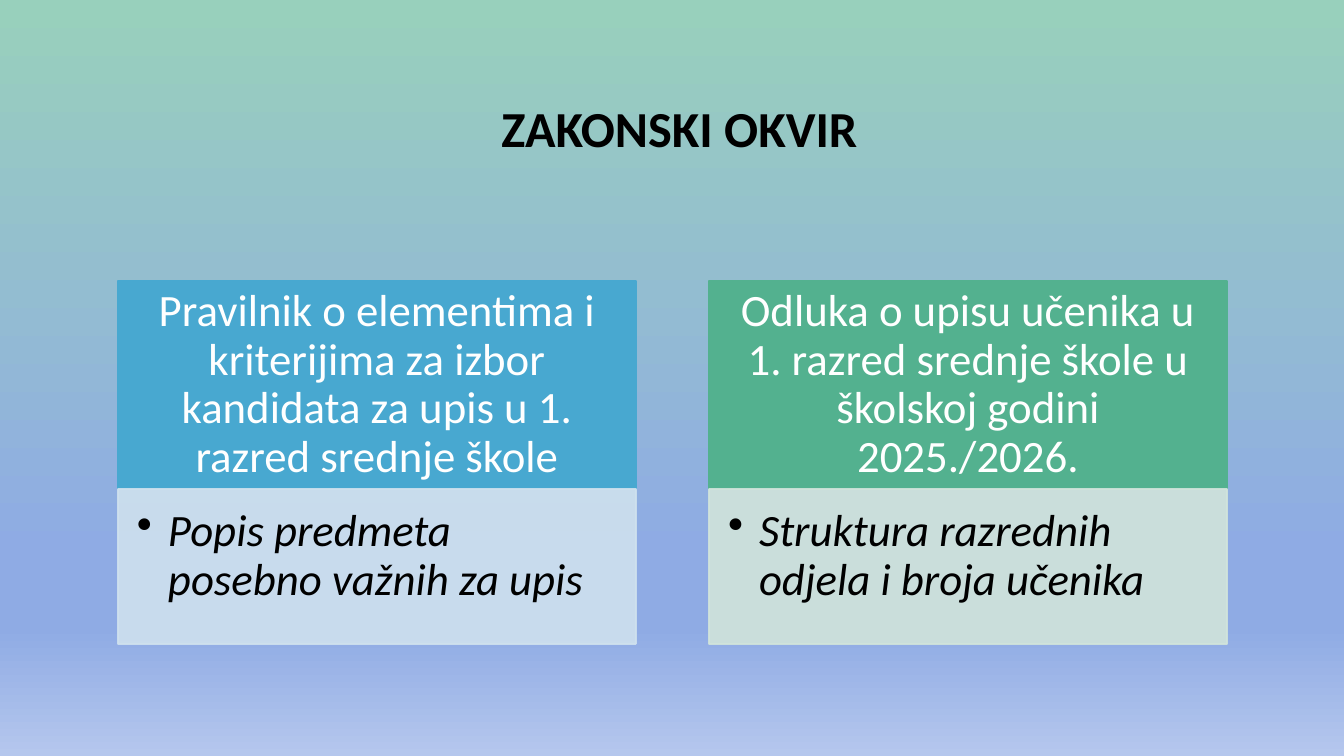
from dataclasses import dataclass

import pptx
import pptx.dml.color
import pptx.enum.shapes
import pptx.enum.text
import pptx.oxml.ns
import pptx.util
from lxml import etree

TITLE = "ZAKONSKI OKVIR"
# heading, detail, heading colour, detail colour
COLUMNS = [
    ("Pravilnik o elementima i kriterijima za izbor kandidata za upis u 1. razred srednje škole",
     "Popis predmeta posebno važnih za upis", "48A8D0", "CFE1EE"),
    ("Odluka o upisu učenika u 1. razred srednje škole u školskoj godini 2025./2026.",
     "Struktura razrednih odjela i broja učenika", "53B18F", "D1E4DB"),
]


@dataclass(frozen=True)
class Theme:
    font: str = "Calibri"
    title_size: int = 36
    body_size: int = 32
    dark: str = "000000"
    light: str = "FFFFFF"
    line_width: float = 1.25
    line_spacing: float = 0.9
    detail_opacity: int = 90
    background: tuple = ((0, "98D0BC"), (74, "8FABE4"), (83, "8FABE4"), (100, "B5C7ED"))


THEME = Theme()
SLIDE_WIDTH, SLIDE_HEIGHT = 1344, 756
COLUMN_LEFT, COLUMN_TOP, COLUMN_WIDTH, COLUMN_PITCH = 118, 281, 518, 591
HEADING_HEIGHT, DETAIL_HEIGHT = 208, 155
BULLET_INDENT = 31

qn = pptx.oxml.ns.qn
ALIGN = pptx.enum.text.PP_ALIGN
ANCHOR = pptx.enum.text.MSO_ANCHOR


def px(length):
    return pptx.util.Emu(round(length * 12192000 / SLIDE_WIDTH))


def rgb(value):
    return pptx.dml.color.RGBColor.from_string(value)


def paint_background(page):
    fill = page.background.fill
    fill.gradient()
    fill.gradient_angle = 270
    stops = page.element.find(".//" + qn("a:gsLst"))
    for stop in list(stops):
        stops.remove(stop)
    for percent, color in THEME.background:
        stop = etree.SubElement(stops, qn("a:gs"), pos=str(percent * 1000))
        etree.SubElement(stop, qn("a:srgbClr"), val=color)


def write(shape, text, size, color, align, anchor, insets, bullet=False):
    frame = shape.text_frame
    frame.word_wrap = True
    frame.auto_size = pptx.enum.text.MSO_AUTO_SIZE.NONE
    frame.vertical_anchor = anchor
    (frame.margin_left, frame.margin_top,
     frame.margin_right, frame.margin_bottom) = map(px, insets)
    para = frame.paragraphs[0]
    para.text = text
    para.alignment = align
    para.line_spacing = THEME.line_spacing
    para.space_before = pptx.util.Pt(0)
    if bullet:
        properties = para._p.get_or_add_pPr()
        properties.set("marL", str(px(BULLET_INDENT)))
        properties.set("indent", str(-px(BULLET_INDENT)))
        etree.SubElement(properties, qn("a:buChar"), char="•")
    para.font.name = THEME.font
    para.font.size = pptx.util.Pt(size)
    para.font.color.rgb = rgb(color)
    return para


def add_panel(page, left, top, height, color, opacity=100):
    panel = page.shapes.add_shape(pptx.enum.shapes.MSO_SHAPE.RECTANGLE,
                                  px(left), px(top), px(COLUMN_WIDTH), px(height))
    panel.shadow.inherit = False
    panel.fill.solid()
    panel.fill.fore_color.rgb = rgb(color)
    panel.line.color.rgb = rgb(color)
    panel.line.width = pptx.util.Pt(THEME.line_width)
    if opacity < 100:
        for tint in panel._element.spPr.iter(qn("a:srgbClr")):
            etree.SubElement(tint, qn("a:alpha"), val=str(opacity * 1000))
    return panel


def main():
    deck = pptx.Presentation()
    deck.slide_width, deck.slide_height = px(SLIDE_WIDTH), px(SLIDE_HEIGHT)
    page = deck.slides.add_slide(deck.slide_layouts[5])
    paint_background(page)

    title = page.shapes.title
    title.left, title.top, title.width, title.height = map(px, (125, 70, 1109, 177))
    para = write(title, TITLE, THEME.title_size, THEME.dark,
                 ALIGN.CENTER, ANCHOR.MIDDLE, (10, 5, 10, 60))
    para.font.bold = True

    for index, (heading, detail, strong, pale) in enumerate(COLUMNS):
        left = COLUMN_LEFT + index * COLUMN_PITCH
        panel = add_panel(page, left, COLUMN_TOP, HEADING_HEIGHT, strong)
        write(panel, heading, THEME.body_size, THEME.light,
              ALIGN.CENTER, ANCHOR.MIDDLE, (25, 14, 25, 14))
        panel = add_panel(page, left, COLUMN_TOP + HEADING_HEIGHT, DETAIL_HEIGHT,
                          pale, THEME.detail_opacity)
        para = write(panel, detail, THEME.body_size, THEME.dark,
                     ALIGN.LEFT, ANCHOR.TOP, (19, 19, 25, 28), bullet=True)
        para.font.italic = True

    deck.save("out.pptx")


if __name__ == "__main__":
    main()
